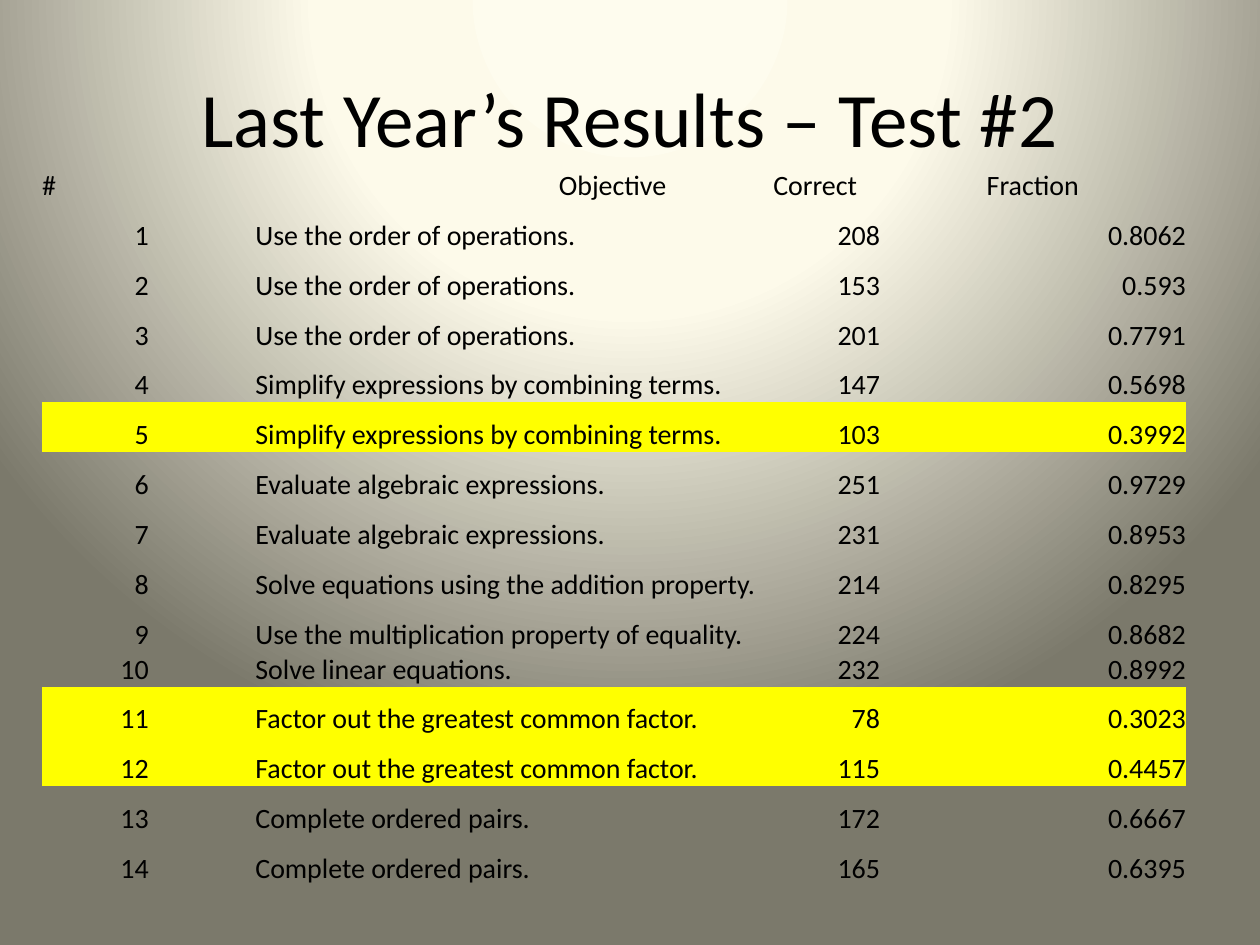
"""Build the slide with last year's results for test #2."""
from dataclasses import dataclass

from pptx import Presentation
from pptx import util as u
from pptx.dml.color import RGBColor
from pptx.enum import text
from pptx.oxml import parse_xml
from pptx.oxml.ns import nsdecls


@dataclass(frozen=True)
class Theme:
    font: str = "Calibri"
    ink: str = "000000"
    highlight: str = "FFFF00"
    glow: tuple = ((0, "FEFCEE"), (40, "FDFAEA"), (100, "7B796B"))
    title_size: int = 44
    body_size: int = 16
    plain_table: str = "{2D5ABB26-0587-4C30-8999-92F81FD0307C}"


LEFT, CENTER, RIGHT = text.PP_ALIGN.LEFT, text.PP_ALIGN.CENTER, text.PP_ALIGN.RIGHT
COLUMN_WIDTHS = (61, 61, 112.5, 61, 122.5, 61, 61, 113.8)
TALL_ROW, SHORT_ROW = 28.5, 20
HEADINGS = {0: "#", 4: "Objective", 5: "Correct", 7: "Fraction"}
RESULTS = (
    ("Use the order of operations.", "208", "0.8062"),
    ("Use the order of operations.", "153", "0.593"),
    ("Use the order of operations.", "201", "0.7791"),
    ("Simplify expressions by combining terms.", "147", "0.5698"),
    ("Simplify expressions by combining terms.", "103", "0.3992"),
    ("Evaluate algebraic expressions.", "251", "0.9729"),
    ("Evaluate algebraic expressions.", "231", "0.8953"),
    ("Solve equations using the addition property.", "214", "0.8295"),
    ("Use the multiplication property of equality.", "224", "0.8682"),
    ("Solve linear equations.", "232", "0.8992"),
    ("Factor out the greatest common factor.", "78", "0.3023"),
    ("Factor out the greatest common factor.", "115", "0.4457"),
    ("Complete ordered pairs.", "172", "0.6667"),
    ("Complete ordered pairs.", "165", "0.6395"),
)
SHORT_ROWS = (0, 10)
PASS_FRACTION = 0.5


class ResultsSlide:
    def __init__(self, slide, theme):
        self.slide = slide
        self.theme = theme

    def background(self):
        stops = "".join(
            f'<a:gs pos="{position * 1000}"><a:srgbClr val="{color}"/></a:gs>'
            for position, color in self.theme.glow
        )
        gradient = parse_xml(
            f'<a:gradFill {nsdecls("a")} rotWithShape="1"><a:gsLst>{stops}</a:gsLst>'
            '<a:path path="circle"><a:fillToRect l="50000" t="-80000" r="50000" b="180000"/>'
            "</a:path></a:gradFill>"
        )
        self.slide.background.fill.solid()
        properties = self.slide.background._cSld.bg.bgPr
        properties.replace(properties[0], gradient)

    def set_words(self, paragraph, words, size, align):
        paragraph.text = words
        paragraph.alignment = align
        for run in paragraph.runs:
            run.font.name = self.theme.font
            run.font.size = u.Pt(size)
            run.font.color.rgb = RGBColor.from_string(self.theme.ink)
        if not words:
            paragraph._p.get_or_add_endParaRPr().set("sz", str(size * 100))

    def title(self, words, left, top, width, height):
        box = self.slide.shapes.add_textbox(*map(u.Pt, (left, top, width, height)))
        frame = box.text_frame
        frame.word_wrap = True
        frame.vertical_anchor = text.MSO_ANCHOR.MIDDLE
        self.set_words(frame.paragraphs[0], words, self.theme.title_size, CENTER)

    def cell(self, cell, words, align, highlighted):
        cell.margin_left = cell.margin_right = cell.margin_top = cell.margin_bottom = 0
        cell.vertical_anchor = text.MSO_ANCHOR.BOTTOM
        if highlighted:
            cell.fill.solid()
            cell.fill.fore_color.rgb = RGBColor.from_string(self.theme.highlight)
        else:
            cell.fill.background()
        self.set_words(cell.text_frame.paragraphs[0], words, self.theme.body_size, align)

    def table(self, left, top):
        heights = [
            SHORT_ROW if row in SHORT_ROWS else TALL_ROW for row in range(len(RESULTS) + 1)
        ]
        table = self.slide.shapes.add_table(
            len(heights), len(COLUMN_WIDTHS),
            *map(u.Pt, (left, top, sum(COLUMN_WIDTHS), sum(heights))),
        ).table
        table.first_row = table.horz_banding = False
        table._tbl.tblPr[0].text = self.theme.plain_table
        for column, width in zip(table.columns, COLUMN_WIDTHS):
            column.width = u.Pt(width)
        for row, height in zip(table.rows, heights):
            row.height = u.Pt(height)

        table.cell(0, 5).merge(table.cell(0, 6))
        for column in range(len(COLUMN_WIDTHS)):
            self.cell(table.cell(0, column), HEADINGS.get(column, ""), LEFT, False)
        for number, (objective, correct, fraction) in enumerate(RESULTS, 1):
            table.cell(number, 2).merge(table.cell(number, 4))
            values = {0: str(number), 2: objective, 5: correct, 7: fraction}
            highlighted = float(fraction) < PASS_FRACTION
            for column in range(len(COLUMN_WIDTHS)):
                align = LEFT if column == 2 else RIGHT
                self.cell(table.cell(number, column), values.get(column, ""), align, highlighted)


def main():
    deck = Presentation()
    deck.slide_width, deck.slide_height = u.Pt(720), u.Pt(540)
    results = ResultsSlide(deck.slides.add_slide(deck.slide_layouts[6]), Theme())
    results.background()
    results.title("Last Year’s Results – Test #2", 36, 21.6, 648, 90)
    results.table(24, 96)
    deck.save("out.pptx")


if __name__ == "__main__":
    main()
